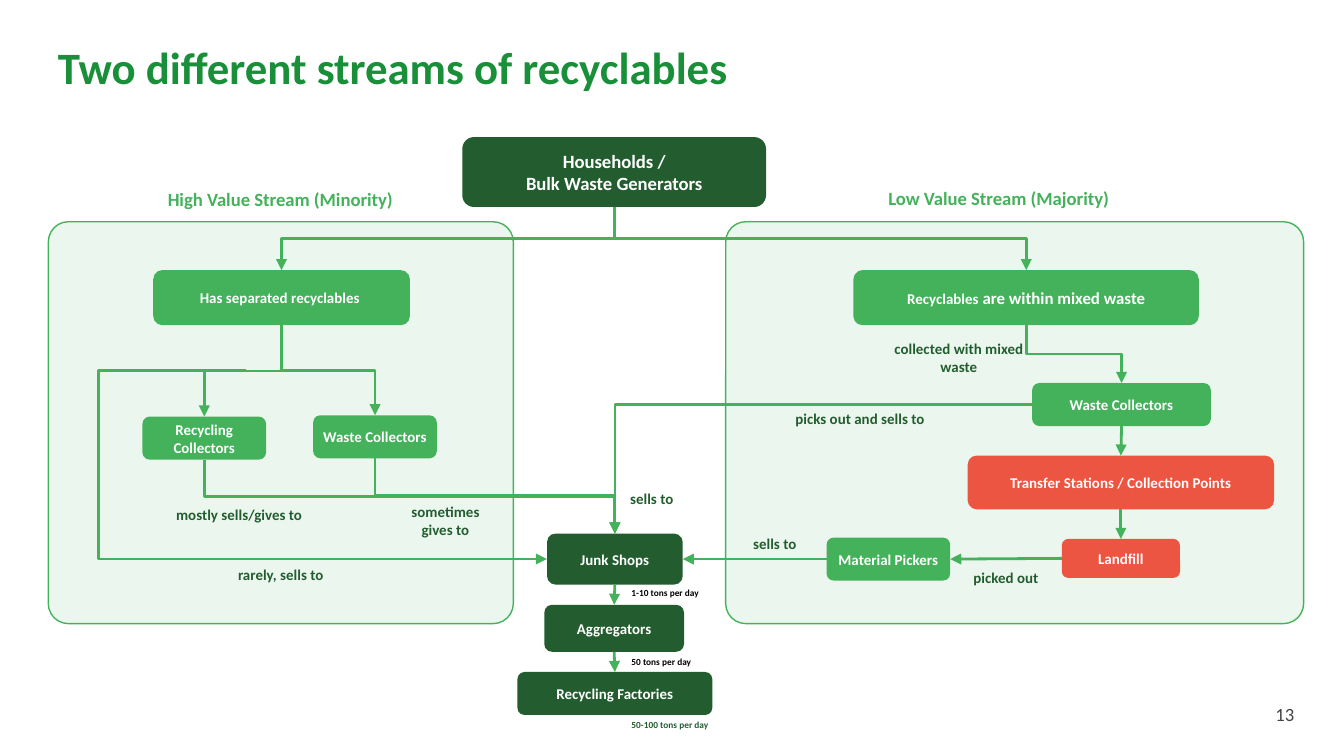
from dataclasses import dataclass

from lxml.etree import SubElement
from pptx import Presentation
from pptx.dml.color import RGBColor
from pptx.enum.shapes import MSO_CONNECTOR as Connector, MSO_SHAPE as Shape
from pptx.enum.text import MSO_ANCHOR as Anchor, MSO_AUTO_SIZE as AutoSize, PP_ALIGN as Align
from pptx.oxml.ns import qn
from pptx.util import Inches, Pt


@dataclass(frozen=True)
class Theme:
    font: str = "Calibri"
    title: str = "188F38"
    dark: str = "235D2F"
    green: str = "44B15B"
    red: str = "EC5542"
    white: str = "FFFFFF"
    black: str = "000000"
    gray: str = "434343"
    title_size: int = 24
    heading_size: int = 10
    mixed_size: int = 9
    body_size: int = 8
    small_size: int = 5
    panel_line: float = 0.75
    arrow_line: float = 1.5


THEME = Theme()


@dataclass(frozen=True)
class Node:
    x: float
    y: float
    width: float
    height: float
    text: str
    color: str = THEME.green
    size: int = THEME.body_size

    @property
    def top(self):
        return self.x + self.width / 2, self.y

    @property
    def bottom(self):
        return self.x + self.width / 2, self.y + self.height

    @property
    def left(self):
        return self.x, self.y + self.height / 2

    @property
    def right(self):
        return self.x + self.width, self.y + self.height / 2


def rgb(color):
    return RGBColor.from_string(color)


def add_run(paragraph, text, size, color, bold=True):
    run = paragraph.add_run()
    run.text = text
    run.font.name = THEME.font
    run.font.size = Pt(size)
    run.font.bold = bold
    run.font.color.rgb = rgb(color)


def write_text(shape, text, *, size=THEME.body_size, color=THEME.dark, bold=True,
               align=Align.CENTER, anchor=Anchor.TOP, margins=(0.02, 0.02), wrap=True):
    frame = shape.text_frame
    frame.auto_size = AutoSize.NONE
    frame.word_wrap = wrap
    frame.vertical_anchor = anchor
    frame.margin_left = frame.margin_right = Inches(margins[0])
    frame.margin_top = frame.margin_bottom = Inches(margins[1])
    for index, line in enumerate(text.split("\n")):
        paragraph = frame.add_paragraph() if index else frame.paragraphs[0]
        paragraph.alignment = align
        add_run(paragraph, line, size, color, bold)


def add_label(slide, x, y, width, height, text, **text_format):
    box = slide.shapes.add_textbox(Inches(x), Inches(y), Inches(width), Inches(height))
    write_text(box, text, **text_format)


def add_rounded(slide, x, y, width, height, color, corner):
    shape = slide.shapes.add_shape(
        Shape.ROUNDED_RECTANGLE, Inches(x), Inches(y), Inches(width), Inches(height))
    shape.shadow.inherit = False
    shape.adjustments[0] = corner
    shape.fill.solid()
    shape.fill.fore_color.rgb = rgb(color)
    return shape


def add_panel(slide, x, width):
    panel = add_rounded(slide, x, 1.65, width, 2.99, THEME.green, 0.05)
    panel.line.color.rgb = rgb(THEME.green)
    panel.line.width = Pt(THEME.panel_line)
    color = panel.fill._xPr.find(qn("a:solidFill"))[0]
    SubElement(color, qn("a:alpha")).set("val", "10000")


def add_node(slide, node):
    shape = add_rounded(slide, node.x, node.y, node.width, node.height, node.color, 0.167)
    shape.line.fill.background()
    write_text(shape, node.text, size=node.size, color=THEME.white,
               anchor=Anchor.MIDDLE, margins=(0.02, 0.01))
    return shape


def add_arrow(slide, start, end, kind=Connector.STRAIGHT):
    points = [Inches(value) for value in (*start, *end)]
    connector = slide.shapes.add_connector(kind, *points)
    connector.line.color.rgb = rgb(THEME.green)
    connector.line.width = Pt(THEME.arrow_line)
    SubElement(connector.line._get_or_add_ln(), qn("a:tailEnd")).set("type", "triangle")
    SubElement(connector._element.spPr, qn("a:effectLst"))
    return connector


def add_drop(slide, start, end):
    connector = add_arrow(slide, start, end, Connector.ELBOW)
    across, down = end[0] - start[0], end[1] - start[1]
    connector.left = Inches((start[0] + end[0] - down) / 2)
    connector.top = Inches((start[1] + end[1] - abs(across)) / 2)
    connector.width, connector.height = Inches(down), Inches(abs(across))
    transform = connector._element.spPr.find(qn("a:xfrm"))
    transform.set("rot", str((270 if across > 0 else 90) * 60000))
    transform.set("flipH", "1" if across > 0 else "0")


def add_corner(slide, start, end):
    connector = add_arrow(slide, start, end, Connector.ELBOW)
    connector._element.spPr.find(qn("a:prstGeom")).set("prst", "bentConnector2")


def add_loop(slide, start, end, side):
    connector = add_arrow(slide, start, end, Connector.ELBOW)
    ratio = (side - start[0]) / (end[0] - start[0])
    geometry = connector._element.spPr.find(qn("a:prstGeom"))
    guides = geometry.find(qn("a:avLst"))
    if guides is None:
        guides = SubElement(geometry, qn("a:avLst"))
    guide = SubElement(guides, qn("a:gd"))
    guide.set("name", "adj1")
    guide.set("fmla", f"val {round(ratio * 100000)}")


def add_title(slide, text):
    title = slide.shapes.title
    title.left, title.top = Inches(0.33), Inches(0.18)
    title.width, title.height = Inches(5.43), Inches(0.63)
    write_text(title, text, size=THEME.title_size, color=THEME.title,
               align=Align.LEFT, anchor=Anchor.MIDDLE, margins=(0.1, 0.1))


def add_flow(slide):
    households = Node(3.44, 1.02, 2.26, 0.52, "Households /\nBulk Waste Generators",
                      THEME.dark, THEME.heading_size)
    separated = Node(1.14, 2.01, 1.91, 0.41, "Has separated recyclables ")
    mixed = Node(6.35, 2.01, 2.57, 0.41, "Recyclables")
    recycling = Node(1.06, 3.1, 0.92, 0.32, "Recycling Collectors")
    collectors = Node(2.33, 3.09, 0.92, 0.32, "Waste Collectors")
    mixed_collectors = Node(7.68, 2.85, 1.33, 0.32, "Waste Collectors")
    transfer = Node(7.2, 3.39, 2.28, 0.4, "Transfer Stations / Collection Points", THEME.red)
    landfill = Node(7.9, 4.01, 0.88, 0.29, "Landfill", THEME.red)
    pickers = Node(6.15, 4, 0.92, 0.32, "Material Pickers")
    junk = Node(4.07, 3.97, 1.01, 0.38, "Junk Shops", THEME.dark)
    aggregators = Node(4.05, 4.5, 1.04, 0.35, "Aggregators", THEME.dark)
    factories = Node(3.85, 5, 1.45, 0.32, "Recycling Factories", THEME.dark)

    for node in (households, separated, recycling, collectors, mixed_collectors,
                 transfer, landfill, pickers, junk, aggregators, factories):
        add_node(slide, node)
    paragraph = add_node(slide, mixed).text_frame.paragraphs[0]
    add_run(paragraph, " are within mixed waste", THEME.mixed_size, THEME.white)

    for source, target in ((households, mixed), (households, separated),
                           (separated, recycling), (separated, collectors),
                           (recycling, junk), (collectors, junk), (mixed, mixed_collectors)):
        add_drop(slide, source.bottom, target.top)
    for source, target in ((mixed_collectors, transfer), (transfer, landfill),
                           (junk, aggregators), (aggregators, factories)):
        add_arrow(slide, source.bottom, target.top)
    for source, target in ((landfill, pickers), (pickers, junk)):
        add_arrow(slide, source.left, target.right)
    add_corner(slide, mixed_collectors.left, junk.top)
    add_loop(slide, (1.83, 2.76), junk.left, 0.73)


def add_labels(slide):
    for x, y, width, text in ((0.95, 1.39, 2.27, "High Value Stream (Minority)"),
                              (6.21, 1.38, 2.44, "Low Value Stream (Majority)")):
        add_label(slide, x, y, width, 0.21, text, size=THEME.heading_size,
                  color=THEME.green, margins=(0.02, 0.01))
    for x, y, width, text, anchor in (
            (2.95, 3.78, 0.73, "sometimes gives to", Anchor.MIDDLE),
            (1.19, 3.73, 1.18, "mostly sells/gives to", Anchor.MIDDLE),
            (1.59, 4.19, 1, "rarely, sells to", Anchor.TOP),
            (6.62, 2.51, 1.03, "collected with mixed waste", Anchor.TOP),
            (4.49, 3.62, 0.72, "sells to", Anchor.TOP),
            (7.19, 4.21, 0.59, "picked out", Anchor.TOP),
            (5.47, 3.96, 0.59, "sells to", Anchor.TOP),
            (5.35, 3.03, 2.1, "picks out and sells to", Anchor.TOP)):
        add_label(slide, x, y, width, 0.19, text, anchor=anchor)
    for y, width, text, color in ((4.28, 0.92, "1-10 tons per day", THEME.black),
                                  (4.79, 1.03, "50 tons per day", THEME.black),
                                  (5.26, 1.22, "50-100 tons per day", THEME.dark)):
        add_label(slide, 4.6, y, width, 0.18, text, size=THEME.small_size,
                  color=color, align=Align.LEFT, margins=(0.1, 0.1))
    add_label(slide, 9.39, 5.13, 0.34, 0.37, "13", size=THEME.heading_size, color=THEME.gray,
              bold=False, anchor=Anchor.MIDDLE, margins=(0.1, 0.1), wrap=False)


def main():
    presentation = Presentation()
    presentation.slide_width = Inches(10)
    presentation.slide_height = presentation.slide_width * 9 // 16
    slide = presentation.slides.add_slide(presentation.slide_layouts[5])
    add_title(slide, "Two different streams of recyclables")
    add_panel(slide, 5.4, 4.3)
    add_panel(slide, 0.36, 3.46)
    add_flow(slide)
    add_labels(slide)
    presentation.save("out.pptx")


if __name__ == "__main__":
    main()
